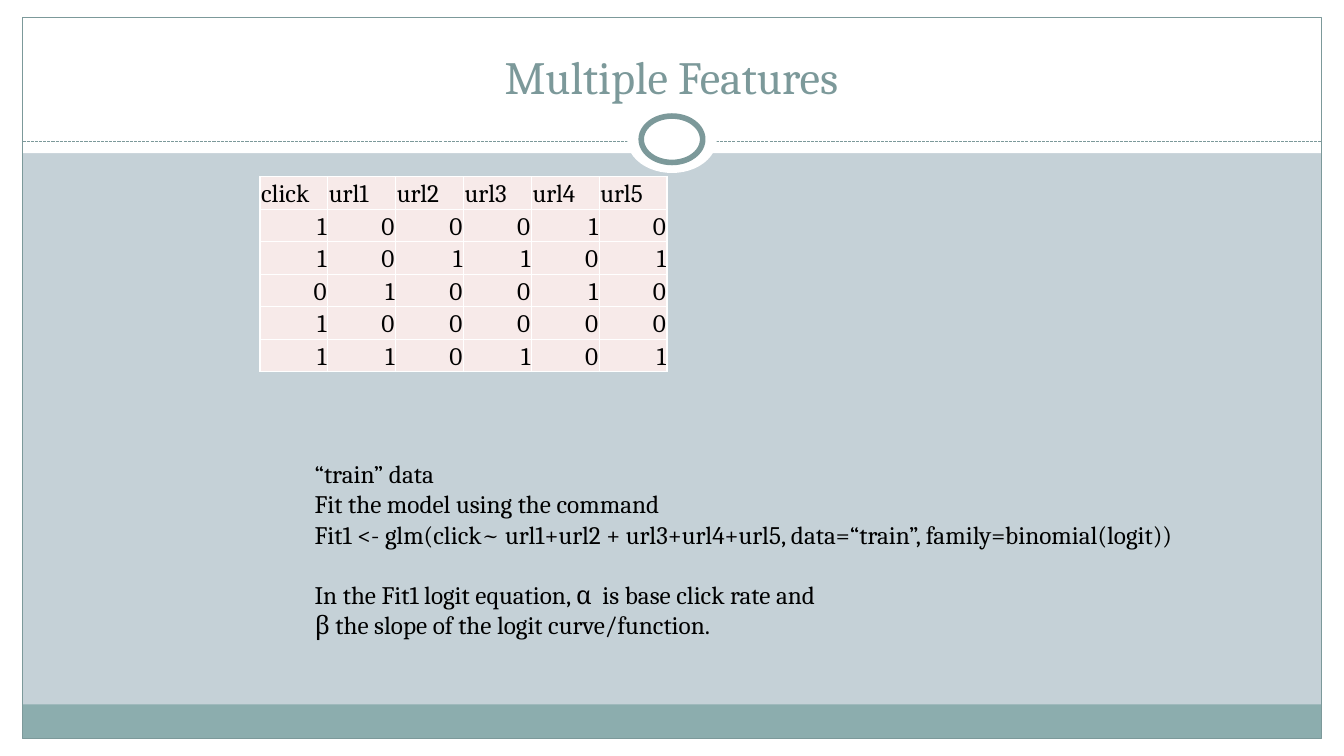
from lxml import etree
from pptx import Presentation, util as u
from pptx.dml.color import RGBColor
from pptx.enum import dml, shapes, text
from pptx.oxml.ns import qn

# Content
TITLE = "Multiple Features"
HEAD = ["click", "url1", "url2", "url3", "url4", "url5"]
ROWS = [
    [1, 0, 0, 0, 1, 0],
    [1, 0, 1, 1, 0, 1],
    [0, 1, 0, 0, 1, 0],
    [1, 0, 0, 0, 0, 0],
    [1, 1, 0, 1, 0, 1],
]
# (line, space before in points)
NOTES = [
    ("“train” data", 0),
    ("Fit the model using the command", 0),
    ("Fit1 <- glm(click~ url1+url2 + url3+url4+url5, data=“train”, family=binomial(logit))", 0),
    ("In the Fit1 logit equation, α  is base click rate and", 21.5),
    ("β the slope of the logit curve/function.", 0),
]
COLORS = {"back": "C5D1D7", "white": "FFFFFF", "band": "8CADAE",
          "accent": "7C999A", "cell": "F7EAE9", "ink": "000000"}
FONT = "Cambria"

# Layout in cm
W, H = 33.87, 19.05
SIDE, EDGE = 0.57, 0.43
HEADER, RULE_Y, BAND = 3.86, 3.56, 0.87
COL, ROW = 1.71, 0.82


def rgb(name):
    return RGBColor.from_string(COLORS[name])


def add_shape(kind, x, y, w, h, fill=None, line=None, width=0.75):
    sp = s.shapes.add_shape(kind, u.Cm(x), u.Cm(y), u.Cm(w), u.Cm(h))
    sp.shadow.inherit = False
    if fill:
        sp.fill.solid()
        sp.fill.fore_color.rgb = rgb(fill)
    else:
        sp.fill.background()
    if line:
        sp.line.color.rgb = rgb(line)
        sp.line.width = u.Pt(width)
    else:
        sp.line.fill.background()


def add_run(p, words, size=18, color="ink"):
    r = p.add_run()
    r.text = words
    r.font.name, r.font.size = FONT, u.Pt(size)
    r.font.color.rgb = rgb(color)


def add_borders(cell):
    pr = cell._tc.get_or_add_tcPr()
    for i, side in enumerate(("a:lnL", "a:lnR", "a:lnT", "a:lnB")):
        ln = etree.Element(qn(side), w=str(u.Pt(1)))
        fill = etree.SubElement(ln, qn("a:solidFill"))
        etree.SubElement(fill, qn("a:srgbClr"), val=COLORS["white"])
        pr.insert(i, ln)


prs = Presentation()
prs.slide_width, prs.slide_height = u.Cm(W), u.Cm(H)
s = prs.slides.add_slide(prs.slide_layouts[6])
s.background.fill.solid()
s.background.fill.fore_color.rgb = rgb("back")

# White margins, bottom band and frame
RECT, OVAL = shapes.MSO_SHAPE.RECTANGLE, shapes.MSO_SHAPE.OVAL
for x, y, w, h in [(0, H - EDGE, W, EDGE), (0, 0, W, HEADER),
                   (0, 0, SIDE, H), (W - SIDE, 0, SIDE, H)]:
    add_shape(RECT, x, y, w, h, "white")
add_shape(RECT, SIDE, H - EDGE - BAND, W - 2 * SIDE, BAND, "band")
add_shape(RECT, SIDE, EDGE, W - 2 * SIDE, H - 2 * EDGE, line="accent")

# Dashed rule with ring
rule = s.shapes.add_connector(shapes.MSO_CONNECTOR.STRAIGHT, u.Cm(SIDE), u.Cm(RULE_Y),
                              u.Cm(W - SIDE), u.Cm(RULE_Y))
rule.line.color.rgb = rgb("accent")
rule.line.width = u.Pt(0.75)
rule.line.dash_style = dml.MSO_LINE.SQUARE_DOT
etree.SubElement(rule._element.spPr, qn("a:effectLst"))
for w, h, line in [(2.26, 1.7, None), (1.55, 1.17, "accent")]:
    add_shape(OVAL, (W - w) / 2, 3.51 - h / 2, w, h, "white", line, 4)

# Title
tf = s.shapes.add_textbox(u.Cm(1.12), u.Cm(0.64), u.Cm(31.6), u.Cm(2.11)).text_frame
tf.word_wrap = True
tf.vertical_anchor = text.MSO_ANCHOR.BOTTOM
tf.paragraphs[0].alignment = text.PP_ALIGN.CENTER
add_run(tf.paragraphs[0], TITLE, 33, "accent")

# Click table
grid = [HEAD] + ROWS
tbl = s.shapes.add_table(len(grid), len(HEAD), u.Cm(6.55), u.Cm(4.45),
                         u.Cm(COL * len(HEAD)), u.Cm(ROW * len(grid))).table
tbl.first_row = tbl.horz_banding = False
for col in tbl.columns:
    col.width = u.Cm(COL)
for i, values in enumerate(grid):
    tbl.rows[i].height = u.Cm(ROW)
    for j, value in enumerate(values):
        cell = tbl.cell(i, j)
        cell.margin_left = cell.margin_right = cell.margin_top = u.Cm(0.03)
        cell.margin_bottom = 0
        cell.vertical_anchor = text.MSO_ANCHOR.BOTTOM
        cell.fill.solid()
        cell.fill.fore_color.rgb = rgb("cell")
        add_borders(cell)
        p = cell.text_frame.paragraphs[0]
        p.alignment = text.PP_ALIGN.RIGHT if i else text.PP_ALIGN.LEFT
        add_run(p, str(value))

# Model notes
tf = s.shapes.add_textbox(u.Cm(7.68), u.Cm(11.43), u.Cm(24.4), u.Cm(6.4)).text_frame
tf.word_wrap = True
for i, (words, gap) in enumerate(NOTES):
    p = tf.add_paragraph() if i else tf.paragraphs[0]
    p.space_before = u.Pt(gap)
    add_run(p, words)

prs.save("out.pptx")
